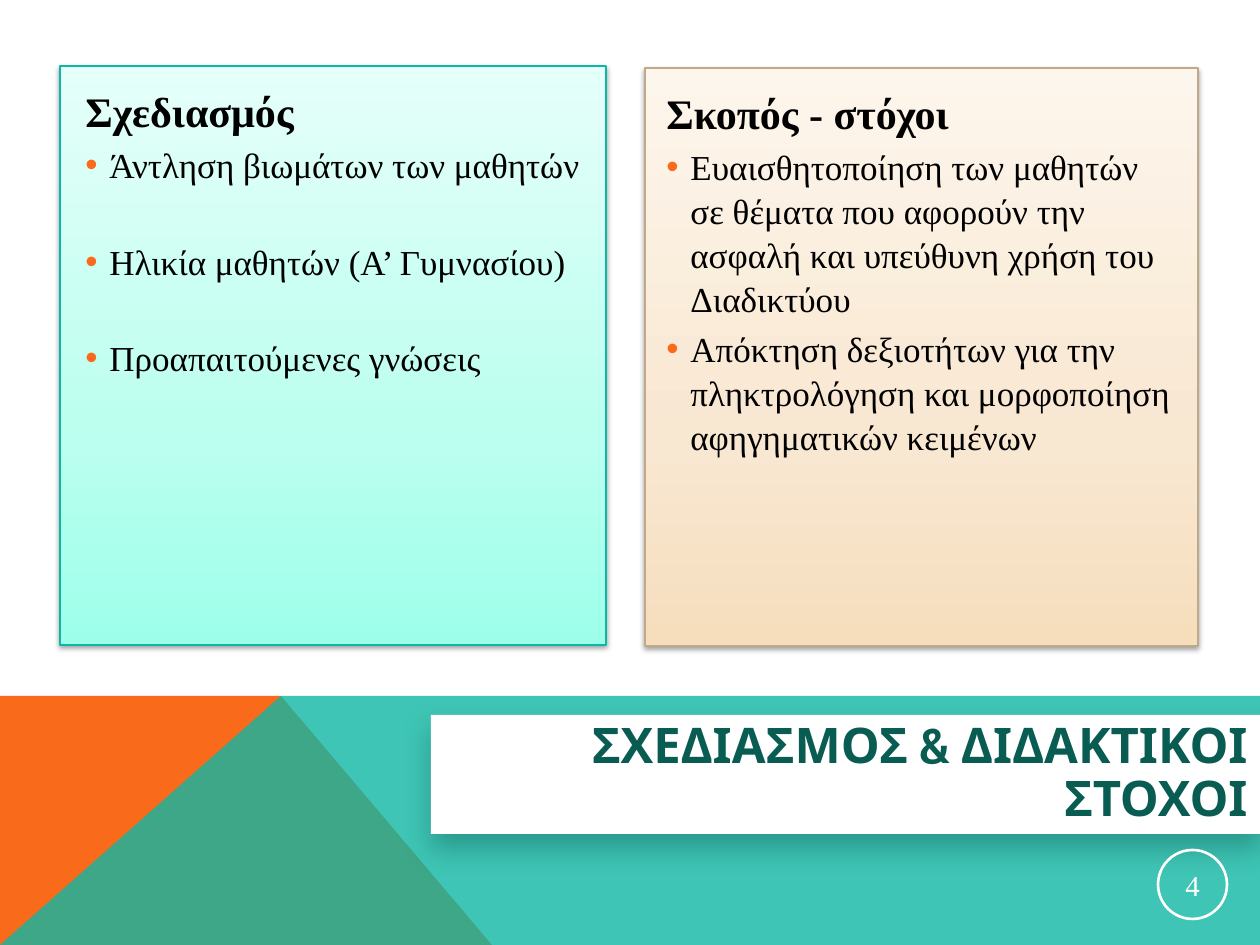
from lxml import etree
from pptx import Presentation
from pptx.dml.color import RGBColor
from pptx.enum.shapes import MSO_SHAPE
from pptx.enum.text import MSO_ANCHOR, PP_ALIGN
from pptx.oxml import parse_xml
from pptx.oxml.ns import nsdecls, qn
from pptx.util import Pt

EMU_PER_PIXEL = 914400 / 126
SLIDE_WIDTH, SLIDE_HEIGHT = 1260, 945
BAND_TOP = 696

RECTANGLE, OVAL = MSO_SHAPE.RECTANGLE, MSO_SHAPE.OVAL
LEFT, CENTER, RIGHT = PP_ALIGN.LEFT, PP_ALIGN.CENTER, PP_ALIGN.RIGHT
MIDDLE = MSO_ANCHOR.MIDDLE

BLACK = RGBColor(0x00, 0x00, 0x00)
WHITE = RGBColor(0xFF, 0xFF, 0xFF)
ORANGE = RGBColor(0xF9, 0x6A, 0x1B)
TEAL = RGBColor(0x10, 0xB7, 0xA3)
DARK_TEAL = RGBColor(0x08, 0x5C, 0x52)
MINT_LINE = RGBColor(0x0C, 0xB7, 0xA3)
SAND_LINE = RGBColor(0xBF, 0xA9, 0x89)
MINT_STOPS = [(0, RGBColor(0x9D, 0xFF, 0xEA)), (35, RGBColor(0xBA, 0xFF, 0xEF)),
              (100, RGBColor(0xE5, 0xFF, 0xF9))]
SAND_STOPS = [(0, RGBColor(0xF6, 0xDE, 0xBD)), (35, RGBColor(0xF8, 0xE7, 0xD1)),
              (100, RGBColor(0xFD, 0xF6, 0xEC))]

TITLE_FONT = "Cabin"
BODY_FONT = "Times New Roman"


def emu(pixels):
    return round(pixels * EMU_PER_PIXEL)


class SlideBuilder:
    def __init__(self, slide):
        self.slide = slide

    def polygon(self, points, color, opacity=100):
        builder = self.slide.shapes.build_freeform(*points[0], scale=EMU_PER_PIXEL)
        builder.add_line_segments(points[1:], close=True)
        shape = builder.convert_to_shape()
        shape.shadow.inherit = False
        shape.line.fill.background()
        self.solid_fill(shape, color)
        if opacity < 100:
            color_element = shape._element.spPr.find(qn("a:solidFill"))[0]
            etree.SubElement(color_element, qn("a:alpha"), val=str(opacity * 1000))

    def solid_fill(self, shape, color):
        shape.fill.solid()
        shape.fill.fore_color.rgb = color

    def shape(self, kind, box, line=None, line_width=0.75):
        shape = self.slide.shapes.add_shape(kind, *map(emu, box))
        shape.shadow.inherit = False
        shape.fill.background()
        if line is None:
            shape.line.fill.background()
        else:
            shape.line.color.rgb = line
            shape.line.width = Pt(line_width)
        return shape

    def shadow(self, shape, color, opacity, blur, distance):
        """Cast a shadow straight down; blur and distance are in points."""
        effects = shape._element.spPr.find(qn("a:effectLst"))
        effects.append(parse_xml(
            f'<a:outerShdw {nsdecls("a")} blurRad="{Pt(blur)}" dist="{Pt(distance)}" '
            f'dir="5400000" rotWithShape="0"><a:srgbClr val="{color}">'
            f'<a:alpha val="{opacity * 1000}"/></a:srgbClr></a:outerShdw>'))

    def panel(self, box, stops, line):
        """Draw a card whose gradient runs from bottom to top."""
        shape = self.shape(RECTANGLE, box, line)
        stop_xml = "".join(f'<a:gs pos="{position * 1000}"><a:srgbClr val="{color}"/></a:gs>'
                           for position, color in stops)
        gradient = parse_xml(f'<a:gradFill {nsdecls("a")} rotWithShape="1"><a:gsLst>{stop_xml}'
                             '</a:gsLst><a:lin ang="16200000" scaled="0"/></a:gradFill>')
        properties = shape._element.spPr
        properties.replace(properties.find(qn("a:noFill")), gradient)
        self.shadow(shape, BLACK, 38, 3.1, 1.6)

    def set_text(self, paragraph, text, size, color=BLACK, font=BODY_FONT, bold=False,
                 align=LEFT):
        paragraph.add_run().text = text
        paragraph.alignment = align
        paragraph.font.name = font
        paragraph.font.size = Pt(size)
        paragraph.font.bold = bold
        paragraph.font.color.rgb = color

    def bullet(self, paragraph):
        properties = paragraph._p.get_or_add_pPr()
        properties.set("marL", str(emu(24)))
        properties.set("indent", str(-emu(24)))
        for xml in (f'<a:buClr {nsdecls("a")}><a:srgbClr val="{ORANGE}"/></a:buClr>',
                    f'<a:buFont {nsdecls("a")} typeface="Arial"/>',
                    f'<a:buChar {nsdecls("a")} char="•"/>'):
            properties.append(parse_xml(xml))

    def bullet_list(self, box, heading, items, gap):
        """Add a heading and bullets; gap is the space in points between bullets."""
        frame = self.slide.shapes.add_textbox(*map(emu, box)).text_frame
        frame.word_wrap = True
        self.set_text(frame.paragraphs[0], heading, 24, bold=True)
        frame.paragraphs[0].line_spacing = 1.05
        for index, item in enumerate(items):
            paragraph = frame.add_paragraph()
            paragraph.line_spacing = 1.05
            paragraph.space_before = Pt(gap if index else 3)
            self.bullet(paragraph)
            self.set_text(paragraph, item, 20)

    def title(self, box, text):
        shape = self.shape(RECTANGLE, box)
        self.solid_fill(shape, WHITE)
        self.shadow(shape, DARK_TEAL, 40, 16, 8)
        frame = shape.text_frame
        frame.word_wrap = True
        frame.vertical_anchor = MIDDLE
        frame.paragraphs[0].line_spacing = 0.9
        self.set_text(frame.paragraphs[0], text, 28, DARK_TEAL, TITLE_FONT, True, RIGHT)

    def page_number(self, box, number):
        frame = self.shape(OVAL, box, WHITE, 1.5).text_frame
        frame.margin_left = frame.margin_right = emu(1)
        frame.margin_top = frame.margin_bottom = emu(1)
        frame.vertical_anchor = MIDDLE
        self.set_text(frame.paragraphs[0], number, 16.5, WHITE, align=CENTER)


def main():
    presentation = Presentation()
    presentation.slide_width = emu(SLIDE_WIDTH)
    presentation.slide_height = emu(SLIDE_HEIGHT)
    builder = SlideBuilder(presentation.slides.add_slide(presentation.slide_layouts[6]))

    peak = (281, BAND_TOP)
    bottom_left = (0, SLIDE_HEIGHT)
    builder.polygon([bottom_left, (0, BAND_TOP), peak, (492, SLIDE_HEIGHT)], ORANGE)
    builder.polygon([bottom_left, peak, (SLIDE_WIDTH, BAND_TOP), (SLIDE_WIDTH, SLIDE_HEIGHT)],
                    TEAL, opacity=80)

    builder.panel((645, 68, 553, 578), SAND_STOPS, SAND_LINE)
    builder.panel((60, 66, 546, 579), MINT_STOPS, MINT_LINE)
    builder.title((431, 715, 829, 119), "ΣΧΕΔΙΑΣΜΟΣ & ΔΙΔΑΚΤΙΚΟΙ ΣΤΟΧΟΙ")
    builder.bullet_list((73, 77, 522, 559), "Σχεδιασμός", [
        "Άντληση βιωμάτων των μαθητών",
        "Ηλικία μαθητών (Α’ Γυμνασίου)",
        "Προαπαιτούμενες γνώσεις",
    ], gap=30)
    builder.bullet_list((654, 79, 533, 559), "Σκοπός - στόχοι", [
        "Ευαισθητοποίηση των μαθητών σε θέματα που αφορούν την ασφαλή και υπεύθυνη "
        "χρήση του Διαδικτύου",
        "Απόκτηση δεξιοτήτων για την πληκτρολόγηση και μορφοποίηση αφηγηματικών κειμένων",
    ], gap=3)
    builder.page_number((1158, 850, 69, 69), "4")

    presentation.save("out.pptx")


if __name__ == "__main__":
    main()
